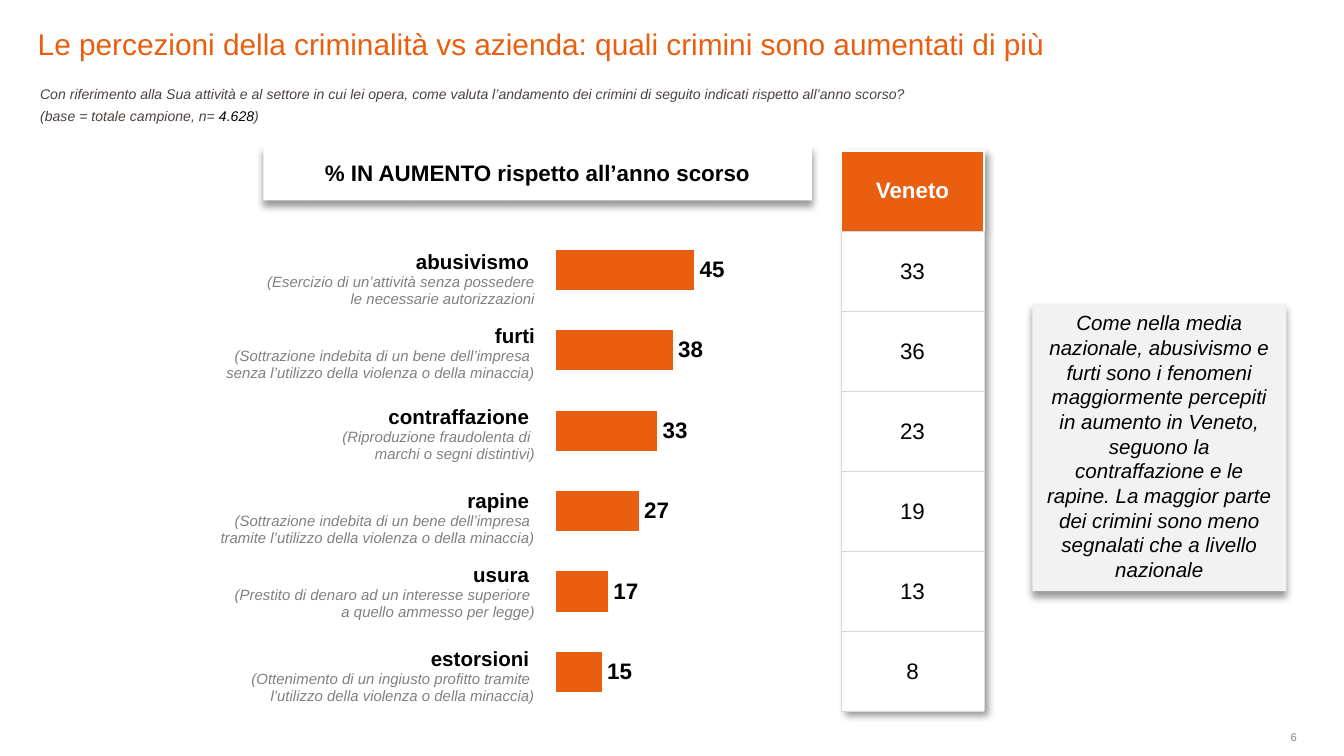
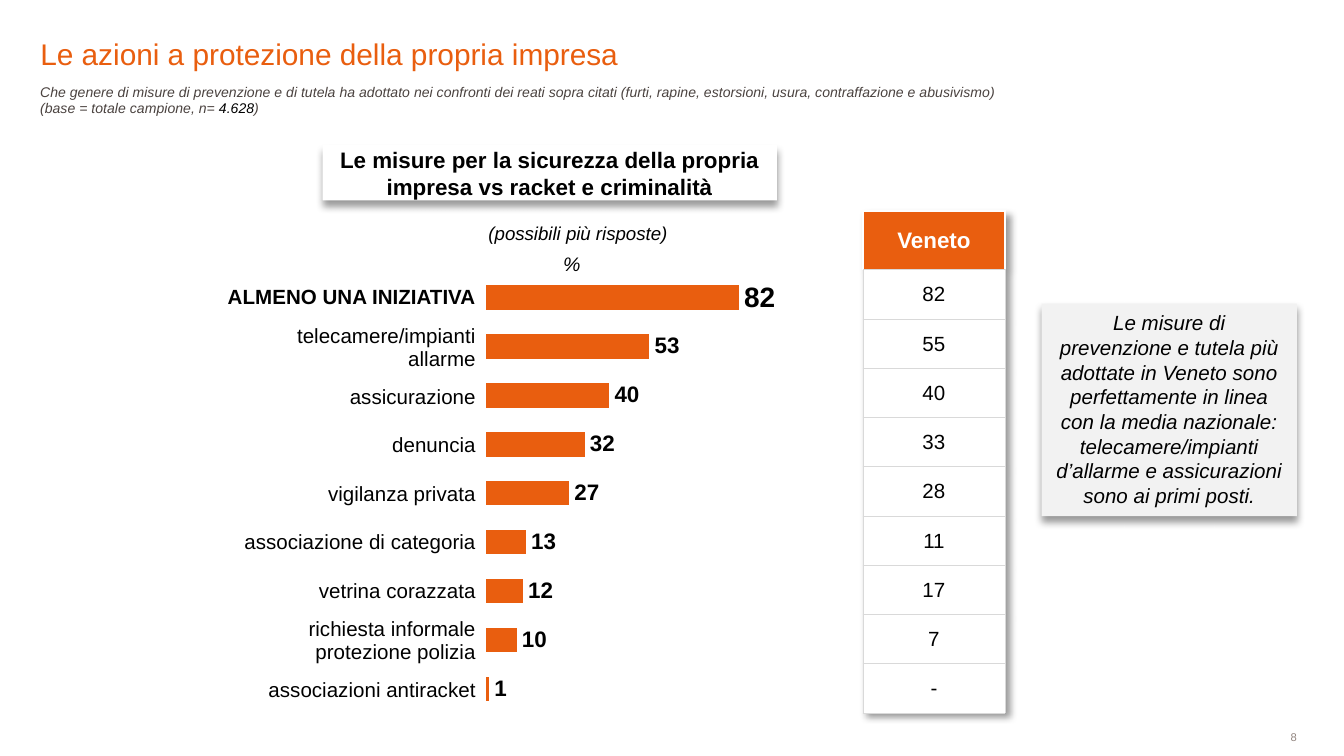
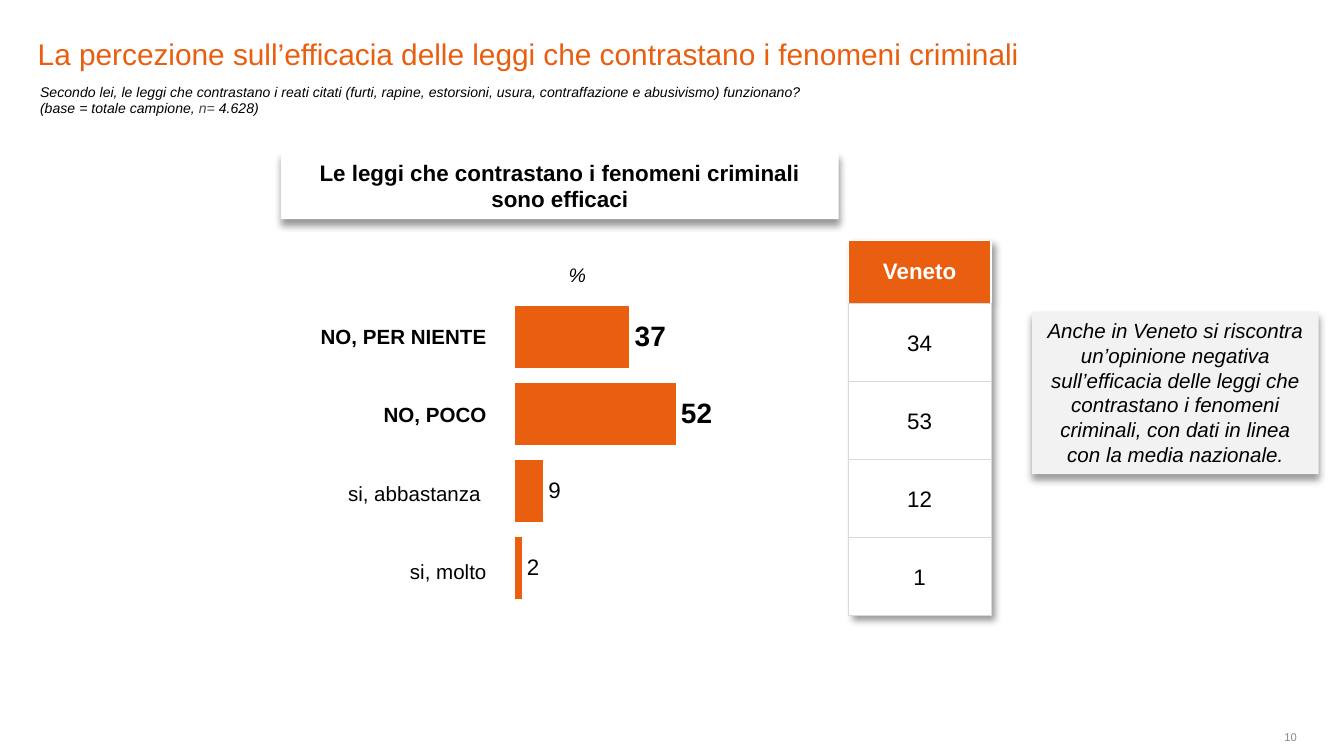
from pptx import Presentation
from pptx.chart.data import CategoryChartData
from pptx.dml.color import RGBColor
from pptx.enum.chart import XL_CHART_TYPE, XL_LABEL_POSITION
from pptx.enum.shapes import MSO_SHAPE
from pptx.enum.text import MSO_ANCHOR, MSO_AUTO_SIZE, PP_ALIGN
from pptx.oxml import parse_xml
from pptx.oxml.ns import nsdecls, qn
from pptx.util import Pt

ORANGE = RGBColor(0xE9, 0x5E, 0x0F)
BLACK = RGBColor(0, 0, 0)
WHITE = RGBColor(0xFF, 0xFF, 0xFF)
BROWN = RGBColor(0x4A, 0x42, 0x3F)
GREY = RGBColor(0x80, 0x80, 0x80)
PALE = RGBColor(0xF2, 0xF2, 0xF2)
RULE = RGBColor(0xD9, 0xD9, 0xD9)
FOOT = RGBColor(0x92, 0x85, 0x80)

LEFT, MID, RIGHT = PP_ALIGN.LEFT, PP_ALIGN.CENTER, PP_ALIGN.RIGHT
SIZE = (720, 405)
PAGE = (598.3, 391.7, 96.5, 6.5)
PLOT_W = 330.5
COL_W = 76.3
BASE = [("(base = totale campione, n= ", BROWN), ("4.628", BLACK), (")", BROWN)]

SLIDES = [
    dict(
        page="6",
        title="Le percezioni della criminalità vs azienda: quali crimini sono aumentati di più",
        title_at=(20.2, 6.5, 561.6, 26.6),
        asks=[
            ((14.4, 42.5, 532.8, 16.6), [[(
                "Con riferimento alla Sua attività e al settore in cui lei opera, come valuta "
                "l’andamento dei crimini di seguito indicati rispetto all’anno scorso?", BROWN)]]),
            ((14.4, 54, 135.4, 16.6), [BASE]),
        ],
        head="% IN AUMENTO rispetto all’anno scorso",
        head_at=(141.1, 77.8, 293.8, 29.5),
        tags=[],
        vals=[45, 38, 33, 27, 17, 15], gap=100, plot_h=1,
        chart_at=(205.2, 123.1, PLOT_W, 258.5),
        label_font=(12, True), points={},
        names=[
            ("abusivismo ", "(Esercizio di un’attività senza possedere",
             "le necessarie autorizzazioni"),
            ("furti", "(Sottrazione indebita di un bene dell’impresa ",
             "senza l’utilizzo della violenza o della minaccia)"),
            ("contraffazione ", "(Riproduzione fraudolenta di ", "marchi o segni distintivi)"),
            ("rapine ", "(Sottrazione indebita di un bene dell’impresa ",
             "tramite l’utilizzo della violenza o della minaccia)"),
            ("usura ", "(Prestito di denaro ad un interesse superiore ",
             "a quello ammesso per legge)"),
            ("estorsioni ", "(Ottenimento di un ingiusto profitto tramite ",
             "l’utilizzo della violenza o della minaccia)"),
        ],
        bold=6, names_at=(46.1, 131, 247.7), names_h=[39.6, 43.2, 45.2, 39.6, 45.2, 39.6],
        local=["33", "36", "23", "19", "13", "8"],
        local_at=(450.7, 80.8), local_h=(42.9, 42.9), local_size=12,
        note="Come nella media nazionale, abusivismo e furti sono i fenomeni maggiormente "
             "percepiti in aumento in Veneto, seguono la contraffazione e le rapine. La maggior "
             "parte dei crimini sono meno segnalati che a livello nazionale",
        note_at=(553, 162.7, 136.1, 154.1),
    ),
    dict(
        page="8",
        title="Le azioni a protezione della propria impresa",
        title_at=(21.6, 11.5, 589.7, 26.6),
        asks=[((14.4, 41, 532.1, 25.2), [[(
            "Che genere di misure di prevenzione e di tutela ha adottato nei confronti dei reati "
            "sopra citati (furti, rapine, estorsioni, usura, contraffazione e abusivismo)",
            BROWN)], BASE])],
        head="Le misure per la sicurezza della propria impresa vs racket e criminalità",
        head_at=(172.8, 77.8, 243.4, 29.5),
        tags=[("(possibili più risposte)", 10, (208.8, 115.2, 201.6, 19.4)),
              ("%", 10.5, (295.9, 134.6, 20.9, 13))],
        vals=[82, 53, 40, 32, 27, 13, 12, 10, 1], gap=100, plot_h=1,
        chart_at=(167.8, 146.2, PLOT_W, 236.2),
        label_font=(12, True), points={0: (15, True)},
        names=[("ALMENO UNA INIZIATIVA",), ("telecamere/impianti\vallarme",), ("assicurazione",),
               ("denuncia",), ("vigilanza privata",), ("associazione di categoria",),
               ("vetrina corazzata",), ("richiesta informale\vprotezione polizia",),
               ("associazioni antiracket",)],
        bold=1, names_at=(110.9, 146.2, 144.7), names_h=[26] * 9,
        local=["82", "55", "40", "33", "28", "11", "17", "7", "-"],
        local_at=(462.2, 113.2), local_h=(31.2, 26.4), local_size=11,
        note="Le misure di prevenzione e tutela più adottate in Veneto sono perfettamente in "
             "linea con la media nazionale: telecamere/impianti d’allarme e assicurazioni sono "
             "ai primi posti.",
        note_at=(558, 162.7, 136.8, 113.8),
    ),
    dict(
        page="10",
        title="La percezione sull’efficacia delle leggi che contrastano i fenomeni criminali",
        title_at=(20.2, 11.5, 589.7, 26.6),
        asks=[((14.4, 41, 501.8, 25.2), [[(
            "Secondo lei, le leggi che contrastano i reati citati (furti, rapine, estorsioni, "
            "usura, contraffazione e abusivismo) funzionano?", BLACK)],
            [("(base = totale campione, ", BLACK), ("n=", BROWN), (" 4.628)", BLACK)]])],
        head="Le leggi che contrastano i fenomeni criminali sono efficaci",
        head_at=(150.5, 81.4, 298.8, 36),
        tags=[("%", 10.5, (298.8, 140.4, 20.9, 13))],
        vals=[37, 52, 9, 2], gap=24, plot_h=0.72,
        chart_at=(183.6, 159.8, PLOT_W, 229.7),
        label_font=(12, False), points={0: (15, True), 1: (15, True)},
        names=[("NO, PER NIENTE",), ("NO, POCO",), ("si, abbastanza ",), ("si, molto",)],
        bold=2, names_at=(150.5, 159.1, 110.9), names_h=[42.1] * 4,
        local=["34", "53", "12", "1"],
        local_at=(454.5, 128.9), local_h=(33.8, 41.8), local_size=12,
        note="Anche in Veneto si riscontra un’opinione negativa sull’efficacia delle leggi che "
             "contrastano i fenomeni criminali, con dati in linea con la media nazionale.",
        note_at=(553, 167, 153.4, 87.1),
    ),
]


def style(font, size, color=BLACK, bold=False, ital=False):
    """Set every trait of a font."""
    font.name, font.size, font.bold, font.italic = "Arial", Pt(size), bold, ital
    font.color.rgb = color


def write(frame, lines, size, color=BLACK, bold=False, ital=False, align=LEFT):
    """Fill a frame with lines, each a string or a list of coloured runs."""
    frame.word_wrap = True
    for i, line in enumerate(lines):
        para = frame.add_paragraph() if i else frame.paragraphs[0]
        para.alignment = align
        if isinstance(line, str):
            para.text = line
            for run in para.runs:
                style(run.font, size, color, bold, ital)
            continue
        for part, tint in line:
            run = para.add_run()
            run.text = part
            style(run.font, size, tint, bold, ital)


def inset(item, left, top, right, low):
    """Set the four margins of a frame or cell."""
    item.margin_left, item.margin_top = Pt(left), Pt(top)
    item.margin_right, item.margin_bottom = Pt(right), Pt(low)


def shade(angle):
    """Make a soft shadow that falls at an angle in degrees."""
    return parse_xml(
        f'<a:outerShdw {nsdecls("a")} blurRad="50800" dist="38100" dir="{angle * 60000}" '
        'algn="t" rotWithShape="0"><a:srgbClr val="000000"><a:alpha val="40000"/>'
        '</a:srgbClr></a:outerShdw>')


def box(slide, at, fill, shadow=False):
    """Add a plain filled rectangle and return its frame."""
    shape = slide.shapes.add_shape(MSO_SHAPE.RECTANGLE, *map(Pt, at))
    shape.shadow.inherit = False
    shape.fill.solid()
    shape.fill.fore_color.rgb = fill
    shape.line.fill.background()
    if shadow:
        shape._element.spPr.find(qn("a:effectLst")).append(shade(90))
    return shape.text_frame


def label(slide, at):
    """Add a text box and return its frame."""
    return slide.shapes.add_textbox(*map(Pt, at)).text_frame


def grid(slide, at, width, tall):
    """Add a one-column table without banding."""
    frame = slide.shapes.add_table(len(tall), 1, *map(Pt, (*at, width, sum(tall))))
    table = frame.table
    table.first_row = table.horz_banding = False
    for row, high in zip(table.rows, tall):
        row.height = Pt(high)
    return table


def edge(cell, sides):
    """Draw the borders of a cell from (side, colour, width) items."""
    props = cell._tc.get_or_add_tcPr()
    for i, (side, color, width) in enumerate(sides):
        props.insert(i, parse_xml(
            f'<a:ln{side} {nsdecls("a")} w="{Pt(width)}"><a:solidFill>'
            f'<a:srgbClr val="{color}"/></a:solidFill></a:ln{side}>'))


def names(slide, data):
    """Add the column of row names beside the bars."""
    *at, width = data["names_at"]
    table = grid(slide, at, width, data["names_h"])
    for i, (head, *rest) in enumerate(data["names"]):
        cell = table.cell(i, 0)
        cell.fill.background()
        if not rest:
            inset(cell, 0.72, 0.72, 0.72, 0)
            cell.vertical_anchor = MSO_ANCHOR.MIDDLE
        write(cell.text_frame, [head, *rest], 8, GREY, ital=True, align=RIGHT)
        for run in cell.text_frame.paragraphs[0].runs:
            style(run.font, 11, bold=i < data["bold"])


def local(slide, data):
    """Add the regional column with its header and shadow."""
    top, high = data["local_h"]
    rows = ["Veneto", *data["local"]]
    table = grid(slide, data["local_at"], COL_W, [top] + [high] * len(data["local"]))
    glow = parse_xml(f'<a:effectLst {nsdecls("a")}/>')
    glow.append(shade(45))
    table._tbl.tblPr.insert(0, glow)
    for i, word in enumerate(rows):
        cell = table.cell(i, 0)
        cell.vertical_anchor = MSO_ANCHOR.MIDDLE
        cell.fill.solid()
        cell.fill.fore_color.rgb = WHITE if i else ORANGE
        if i:
            inset(cell, 0.72, 0.72, 0.72, 0)
        write(cell.text_frame, [word], data["local_size"] if i else 12,
              BLACK if i else WHITE, bold=not i, align=MID)
        line = (RULE, 0.25) if i else (WHITE, 1)
        edge(cell, [("L", *line), ("R", *line), ("T", *line), ("B", RULE, 0.25)])


def bars(slide, data):
    """Add the bar chart with value labels."""
    feed = CategoryChartData(number_format="0")
    feed.categories = [str(i + 1) for i in range(len(data["vals"]))]
    feed.add_series("Series 1", data["vals"])
    chart = slide.shapes.add_chart(
        XL_CHART_TYPE.BAR_CLUSTERED, *map(Pt, data["chart_at"]), feed).chart
    chart.has_legend = chart.has_title = False
    chart.font.name, chart.font.size = "Lato", Pt(13.5)
    chart.font.color.rgb = BLACK
    cats, axis = chart.category_axis, chart.value_axis
    cats.reverse_order = True
    axis.minimum_scale, axis.maximum_scale, axis.major_unit = 0, 100, 10
    axis.has_major_gridlines = False
    cats.visible = axis.visible = False
    plot = chart.plots[0]
    plot.gap_width, plot.vary_by_categories = data["gap"], False
    row = plot.series[0]
    row.format.fill.solid()
    row.format.fill.fore_color.rgb = ORANGE
    tags = row.data_labels
    tags.show_value = True
    tags.number_format, tags.number_format_is_linked = "0", False
    tags.position = XL_LABEL_POSITION.OUTSIDE_END
    size, bold = data["label_font"]
    style(tags.font, size, bold=bold)
    for i, (size, bold) in data["points"].items():
        tag = row.points[i].data_label
        style(tag.font, size, bold=bold)
        tag.position = XL_LABEL_POSITION.OUTSIDE_END
    area = chart._chartSpace.chart.plotArea
    for old in area.findall(qn("c:layout")):
        area.remove(old)
    spots = zip("xywh", (0.28, 0, 0.5, data["plot_h"]))
    area.insert(0, parse_xml(
        f'<c:layout {nsdecls("c")}><c:manualLayout><c:layoutTarget val="inner"/>'
        '<c:xMode val="edge"/><c:yMode val="edge"/>'
        + "".join(f'<c:{k} val="{v}"/>' for k, v in spots)
        + '</c:manualLayout></c:layout>'))


def build(deck, data):
    """Add one slide from its content."""
    slide = deck.slides.add_slide(deck.slide_layouts[5])
    title = slide.shapes.title
    title.left, title.top, title.width, title.height = map(Pt, data["title_at"])
    frame = title.text_frame
    frame.auto_size = MSO_AUTO_SIZE.NONE
    frame.vertical_anchor = MSO_ANCHOR.BOTTOM
    inset(frame, 0, 0, 0, 0)
    write(frame, [data["title"]], 16, ORANGE)

    foot = box(slide, PAGE, WHITE)
    foot.vertical_anchor = MSO_ANCHOR.MIDDLE
    inset(foot, 0, 0, 0, 0)
    write(foot, [data["page"]], 6, FOOT, align=RIGHT)

    bars(slide, data)
    for at, lines in data["asks"]:
        write(label(slide, at), lines, 7.5, ital=True)
    names(slide, data)
    head = box(slide, data["head_at"], WHITE, True)
    head.vertical_anchor = MSO_ANCHOR.MIDDLE
    write(head, [data["head"]], 12, bold=True, align=MID)
    for word, size, at in data["tags"]:
        frame = label(slide, at)
        frame.vertical_anchor = MSO_ANCHOR.MIDDLE
        inset(frame, 0, 0, 0, 0)
        write(frame, [word], size, ital=True, align=MID)
    local(slide, data)
    note = box(slide, data["note_at"], PALE, True)
    note.vertical_anchor = MSO_ANCHOR.TOP
    note.auto_size = MSO_AUTO_SIZE.SHAPE_TO_FIT_TEXT
    write(note, [data["note"]], 11, ital=True, align=MID)


def main():
    """Build the deck and save it."""
    deck = Presentation()
    deck.slide_width, deck.slide_height = map(Pt, SIZE)
    for data in SLIDES:
        build(deck, data)
    deck.save("out.pptx")


if __name__ == "__main__":
    main()
